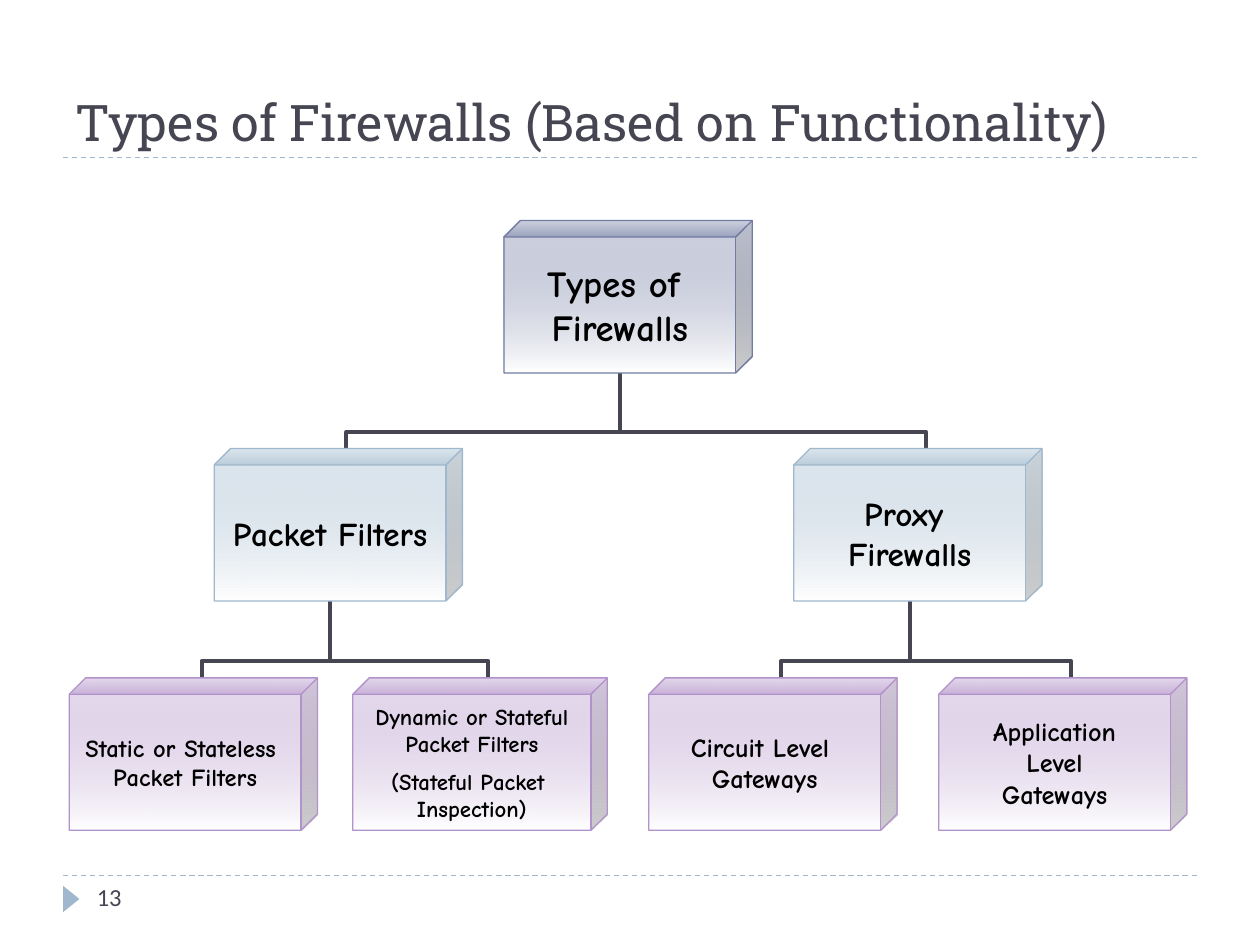
from lxml.etree import SubElement
from pptx import Presentation
from pptx.dml.color import RGBColor
from pptx.enum.dml import MSO_LINE
from pptx.enum.shapes import MSO_CONNECTOR, MSO_SHAPE
from pptx.enum.text import MSO_ANCHOR, MSO_AUTO_SIZE, PP_ALIGN
from pptx.oxml.ns import qn
from pptx.util import Emu, Pt

PX = 9144  # 100 px to the inch
COLORS = {
    "ink": "464653",
    "text": "000000",
    "white": "FFFFFF",
    "root": "727CA3",
    "branch": "9FB8CD",
    "leaf": "B292CA",
}
BOX_WIDTH, BOX_HEIGHT, DEPTH = 197, 121, 13

# key: (parent, left, top, width, colour, text size, lines)
NODES = {
    "types": (None, 400, 175, BOX_WIDTH, "root", 21, ["Types of ", "Firewalls"]),
    "packet": ("types", 170, 356, BOX_WIDTH, "branch", 19, ["Packet Filters"]),
    "proxy": ("types", 630, 356, BOX_WIDTH, "branch", 19, ["Proxy ", "Firewalls"]),
    "static": ("packet", 55, 538, BOX_WIDTH, "leaf", 14,
               ["Static or Stateless ", "Packet Filters"]),
    "dynamic": ("packet", 280, 538, 202, "leaf", 13,
                ["Dynamic or Stateful", "Packet Filters",
                 "(Stateful Packet ", "Inspection)"]),
    "circuit": ("proxy", 515, 538, BOX_WIDTH, "leaf", 15, ["Circuit Level ", "Gateways"]),
    "application": ("proxy", 745, 538, BOX_WIDTH, "leaf", 15,
                    ["Application", "Level", "Gateways"]),
}


def px(*lengths):
    return [Emu(round(length * PX)) for length in lengths]


def color(name):
    return RGBColor.from_string(COLORS[name])


def add_run(paragraph, text, size, font, color_name, bold=False):
    run = paragraph.add_run()
    run.text = text
    run.font.size = Pt(size)
    run.font.name = font
    run.font.bold = bold
    run.font.color.rgb = color(color_name)


def add_line(slide, kind, ends, color_name, width):
    connector = slide.shapes.add_connector(kind, *px(*ends))
    connector.line.color.rgb = color(color_name)
    connector.line.width = Pt(width)
    SubElement(connector.element.spPr, qn("a:effectLst"))
    return connector


def add_rule(slide, left, top, width):
    rule = add_line(slide, MSO_CONNECTOR.STRAIGHT, (left, top, left + width, top), "branch", 0.75)
    rule.line.dash_style = MSO_LINE.DASH


def add_title(slide, left, top, width, height):
    title = slide.shapes.title
    title.left, title.top, title.width, title.height = px(left, top, width, height)
    frame = title.text_frame
    frame.vertical_anchor = MSO_ANCHOR.BOTTOM
    frame.auto_size = MSO_AUTO_SIZE.NONE
    paragraph = frame.paragraphs[0]
    paragraph.alignment = PP_ALIGN.LEFT
    add_run(paragraph, "Types of Firewalls (Based on Functionality)", 28.8, "Roboto Slab", "ink")
    add_rule(slide, left, top + height, width)


def add_footer(slide, left, top, width):
    add_rule(slide, left, top, width)
    marker = slide.shapes.add_shape(
        MSO_SHAPE.ISOSCELES_TRIANGLE, *px(left - 4, top + 12, 21, 13))
    marker.rotation = 90
    marker.shadow.inherit = False
    marker.fill.solid()
    marker.fill.fore_color.rgb = color("branch")
    marker.line.fill.background()
    number = slide.shapes.add_textbox(*px(left + 17, top, 217, 40))
    number.text_frame.word_wrap = True
    add_run(number.text_frame.paragraphs[0], "13", 14, "Calibri", "ink")


def add_elbow(slide, child, parent):
    """Join the child's top face to the middle of the parent's front face."""
    child_x = child[1] + (child[3] + DEPTH) / 2
    parent_x = parent[1] + (parent[3] - DEPTH) / 2
    child_y, parent_y = child[2], parent[2] + BOX_HEIGHT
    drop, span = child_y - parent_y, abs(child_x - parent_x)
    middle_x, middle_y = (child_x + parent_x) / 2, (child_y + parent_y) / 2
    # The box lies on its side; a quarter turn stands it up
    on_right = child_x > parent_x
    reach = drop / 2 if on_right else -drop / 2
    elbow = add_line(
        slide, MSO_CONNECTOR.ELBOW,
        (middle_x + reach, middle_y - span / 2, middle_x - reach, middle_y + span / 2),
        "ink", 2.25)
    properties = elbow.element.spPr
    properties.find(qn("a:xfrm")).set("rot", str((90 if on_right else 270) * 60000))
    guides = properties.find(qn("a:prstGeom")).find(qn("a:avLst"))
    SubElement(guides, qn("a:gd"), name="adj1", fmla="val 22200")


def fill_gradient(shape, color_name):
    shape.fill.gradient()
    shape.fill.gradient_angle = 270
    start, end = shape.fill.gradient_stops
    start.color.rgb, end.color.rgb = color(color_name), color("white")
    first_color = next(shape.element.spPr.iter(qn("a:srgbClr")))
    SubElement(first_color, qn("a:alpha"), val="40000")


def add_box(slide, left, top, width, color_name, size, lines):
    cube = slide.shapes.add_shape(MSO_SHAPE.CUBE, *px(left, top, width, BOX_HEIGHT))
    cube.adjustments[0] = 0.108
    cube.shadow.inherit = False
    fill_gradient(cube, color_name)
    cube.line.color.rgb = color(color_name)
    cube.line.width = Pt(0.75)
    frame = cube.text_frame
    frame.word_wrap = False
    frame.vertical_anchor = MSO_ANCHOR.MIDDLE
    frame.margin_left = frame.margin_right = frame.margin_top = frame.margin_bottom = 0
    for index, line in enumerate(lines):
        paragraph = frame.add_paragraph() if index else frame.paragraphs[0]
        paragraph.alignment = PP_ALIGN.CENTER
        if line.startswith("("):
            paragraph.space_before = Pt(6)
        add_run(paragraph, line, size, "Comic Neue", "text", bold=True)


def add_tree(slide, nodes):
    # Connectors lie behind the boxes
    for node in nodes.values():
        if node[0]:
            add_elbow(slide, node, nodes[node[0]])
    for node in nodes.values():
        add_box(slide, *node[1:])


def main():
    presentation = Presentation()
    presentation.slide_width, presentation.slide_height = px(1000, 750)
    slide = presentation.slides.add_slide(presentation.slide_layouts.get_by_name("Title Only"))
    add_title(slide, 50, 17, 900, 108)
    add_footer(slide, 50, 695, 900)
    add_tree(slide, NODES)
    presentation.save("out.pptx")


if __name__ == "__main__":
    main()
